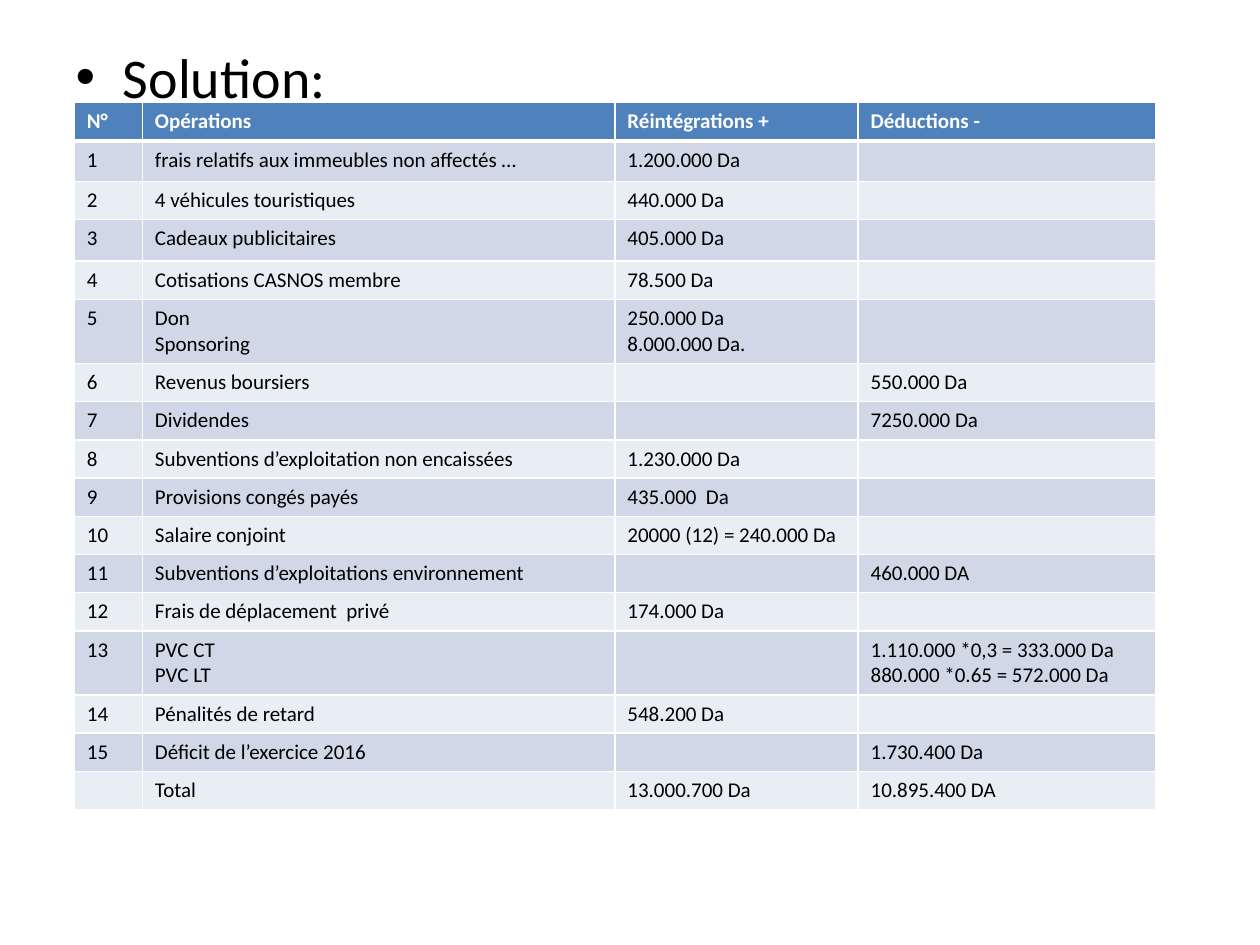
from lxml import etree
from pptx import Presentation
from pptx.dml.color import RGBColor
from pptx.oxml.ns import qn
from pptx.util import Inches, Pt

WHITE = RGBColor(0xFF, 0xFF, 0xFF)
BLACK = RGBColor(0x00, 0x00, 0x00)
HEADER_BLUE = RGBColor(0x4F, 0x81, 0xBD)
BAND_DARK = RGBColor(0xD0, 0xD8, 0xE8)
BAND_LIGHT = RGBColor(0xE9, 0xED, 0xF4)

FONT = "Calibri"
HEADER_FORMAT = {"name": FONT, "size": Pt(12), "bold": True}
CELL_FORMAT = {"name": FONT, "size": Pt(12), "bold": False}
HEADING_FORMAT = {"name": FONT, "size": Pt(32)}

COLUMN_WIDTHS = [0.54, 3.75, 1.93, 2.36]
LINE_HEIGHT = 0.2
ROW_PADDING = 0.1
TALLER_ROWS = {0: 0.31, 1: 0.32, 3: 0.33}

HEADER = ("N°", "Opérations", "Réintégrations +", "Déductions -")
# Operation, amount added back, amount deducted
OPERATIONS = [
    ("frais relatifs aux immeubles non affectés …", "1.200.000 Da", ""),
    ("4 véhicules touristiques", "440.000 Da", ""),
    ("Cadeaux publicitaires", "405.000 Da", ""),
    ("Cotisations CASNOS membre", "78.500 Da", ""),
    ("Don\nSponsoring", "250.000 Da\n8.000.000 Da.", ""),
    ("Revenus boursiers", "", "550.000 Da"),
    ("Dividendes", "", "7250.000 Da"),
    ("Subventions d’exploitation non encaissées", "1.230.000 Da", ""),
    ("Provisions congés payés", "435.000  Da", ""),
    ("Salaire conjoint", "20000 (12) = 240.000 Da", ""),
    ("Subventions d’exploitations environnement", "", "460.000 DA"),
    ("Frais de déplacement  privé", "174.000 Da", ""),
    ("PVC CT\nPVC LT", "",
     "1.110.000 *0,3 = 333.000 Da\n880.000 *0.65 = 572.000 Da"),
    ("Pénalités de retard", "548.200 Da", ""),
    ("Déficit de l’exercice 2016", "", "1.730.400 Da"),
]
TOTAL = ("", "Total", "13.000.700 Da", "10.895.400 DA")


def format_font(font, values, color):
    for name, value in values.items():
        setattr(font, name, value)
    font.color.rgb = color


def add_heading(s, text):
    """Put the bulleted heading in the body placeholder."""
    body = s.placeholders[1]
    body.left, body.top = Inches(0.5), Inches(0.29)
    body.width, body.height = Inches(9), Inches(6.85)
    r = body.text_frame.paragraphs[0].add_run()
    r.text = text
    format_font(r.font, HEADING_FORMAT, BLACK)


def set_borders(cell, widths):
    """Draw white borders; widths maps an edge letter to points."""
    tc_pr = cell._tc.get_or_add_tcPr()
    for edge, width in widths.items():
        ln = etree.SubElement(tc_pr, qn(f"a:ln{edge}"), w=str(Pt(width)))
        fill = etree.SubElement(ln, qn("a:solidFill"))
        etree.SubElement(fill, qn("a:srgbClr"), val=str(WHITE))


def fill_cell(cell, text, row):
    """Write one cell with the borders, fill and font of its row."""
    set_borders(cell, {"L": 1, "R": 1, "T": 3 if row == 1 else 1,
                       "B": 3 if row == 0 else 1})
    cell.fill.solid()
    if row == 0:
        fill, color, values = HEADER_BLUE, WHITE, HEADER_FORMAT
    else:
        fill = BAND_DARK if row % 2 else BAND_LIGHT
        color, values = BLACK, CELL_FORMAT
    cell.fill.fore_color.rgb = fill

    tf = cell.text_frame
    if not text:
        # An empty cell keeps the small size so that its row stays low
        etree.SubElement(tf.paragraphs[0]._p, qn("a:endParaRPr"), sz="1200")
        return
    tf.text = text
    for p in tf.paragraphs:
        for r in p.runs:
            format_font(r.font, values, color)


def row_height(row, texts):
    lines = max(text.count("\n") + 1 for text in texts)
    return TALLER_ROWS.get(row, ROW_PADDING + LINE_HEIGHT * lines)


def add_operations_table(s):
    numbered = [(str(n), *op) for n, op in enumerate(OPERATIONS, 1)]
    rows = [HEADER, *numbered, TOTAL]
    heights = [row_height(i, texts) for i, texts in enumerate(rows)]
    table = s.shapes.add_table(
        len(rows), len(HEADER), Inches(0.59), Inches(0.81),
        Inches(sum(COLUMN_WIDTHS)), Inches(sum(heights))).table
    for column, width in zip(table.columns, COLUMN_WIDTHS):
        column.width = Inches(width)
    for i, texts in enumerate(rows):
        table.rows[i].height = Inches(heights[i])
        for j, text in enumerate(texts):
            fill_cell(table.cell(i, j), text, i)


def main():
    prs = Presentation()
    prs.slide_width, prs.slide_height = Inches(10), Inches(7.5)
    s = prs.slides.add_slide(prs.slide_layouts[1])

    # The heading is in the body, so the title is not needed
    title = s.shapes.title.element
    title.getparent().remove(title)

    add_heading(s, "Solution:")
    add_operations_table(s)
    prs.save("out.pptx")


if __name__ == "__main__":
    main()
